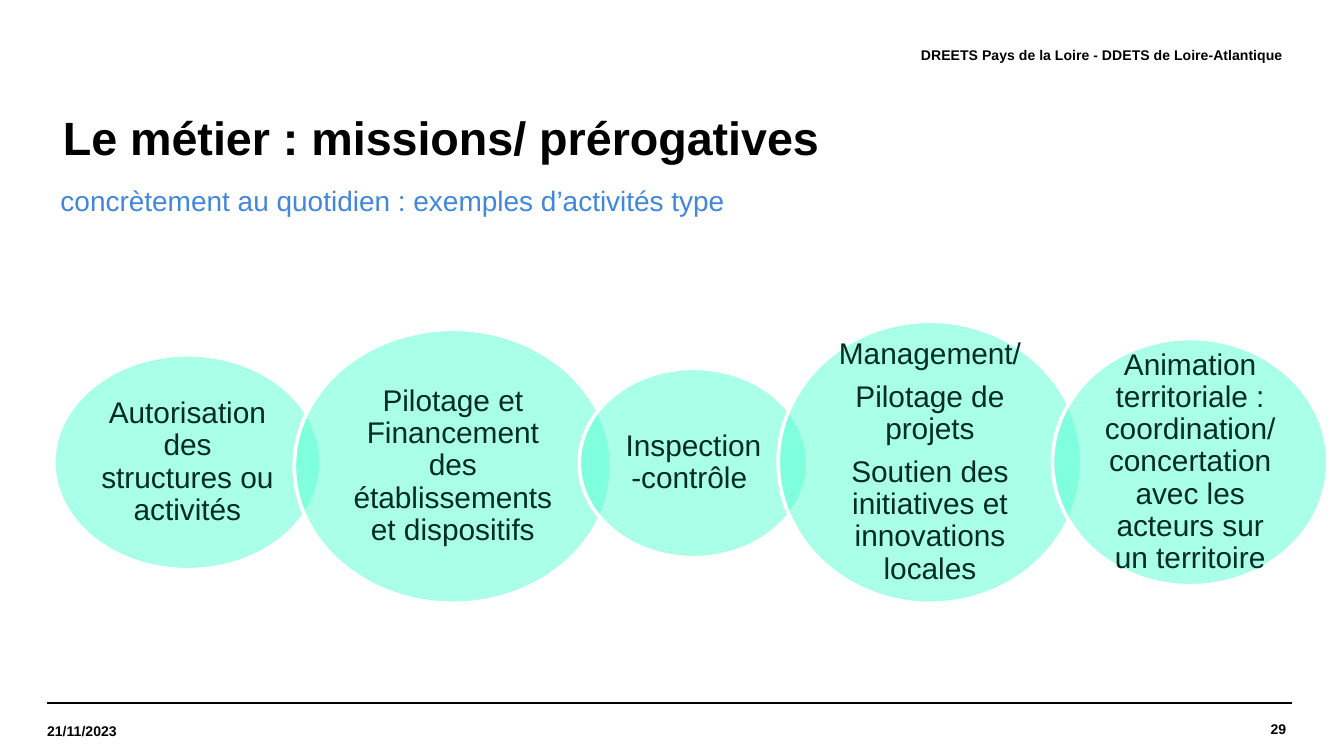
from lxml import etree
from pptx import Presentation
from pptx import util as u
from pptx.dml.color import RGBColor
from pptx.enum import shapes, text
from pptx.oxml import ns

BLACK = RGBColor(0x00, 0x00, 0x00)
WHITE = RGBColor(0xFF, 0xFF, 0xFF)
BLUE = RGBColor(0x41, 0x87, 0xDC)
MINT = RGBColor(0x56, 0xFF, 0xD3)
PINE = RGBColor(0x00, 0x2C, 0x21)
FONT = "Arial"
LEFT, MID, RIGHT = text.PP_ALIGN.LEFT, text.PP_ALIGN.CENTER, text.PP_ALIGN.RIGHT

TITLE = "Le métier : missions/ prérogatives"
LEAD = "concrètement au quotidien : exemples d’activités type"
# words, box, alignment
SMALL = [
    ("DREETS Pays de la Loire - DDETS de Loire-Atlantique ", (226.1, 15.1, 463, 28.1), RIGHT),
    ("21/11/2023", (25.2, 378, 95, 27.4), LEFT),
    ("29", (582.5, 376.6, 106.6, 28.1), RIGHT),
]
RULES = [25.2, 28.1]
RULE_TOP, RULE_LEN = 376.6, 663.9

# box, space after each paragraph, paragraphs
TASKS = [
    ((28.8, 190.1, 143.3, 115.2), 5.6, ["Autorisation des structures ou activités"]),
    ((157.7, 176.4, 169.9, 146.9), 5.6,
     ["Pilotage et Financement des établissements et dispositifs"]),
    ((310.3, 197.3, 122.4, 101.5), 5.6, ["Inspection-contrôle "]),
    ((416.9, 172.1, 162.7, 151.2), 5.6,
     ["Management/", "Pilotage de projets",
      "Soutien des initiatives et innovations locales"]),
    ((563.8, 181.4, 147.6, 132.5), 0,
     ["Animation territoriale : coordination/",
      "concertation avec les acteurs sur un territoire"]),
]


def points(box):
    return [u.Pt(n) for n in box]


def setup(frame, side, edge, anchor):
    frame.word_wrap = True
    frame.vertical_anchor = anchor
    frame.margin_left = frame.margin_right = u.Pt(side)
    frame.margin_top = frame.margin_bottom = u.Pt(edge)


def write(para, words, size, color, bold=False, align=LEFT):
    para.alignment = align
    run = para.add_run()
    run.text = words
    run.font.name, run.font.size = FONT, u.Pt(size)
    run.font.bold = bold
    run.font.color.rgb = color


def label(box, words, size, color, bold=False, align=LEFT,
          side=0, edge=0, anchor=text.MSO_ANCHOR.MIDDLE):
    frame = slide.shapes.add_textbox(*points(box)).text_frame
    setup(frame, side, edge, anchor)
    para = frame.paragraphs[0]
    write(para, words, size, color, bold, align)
    return para


def rule(left):
    line = slide.shapes.add_connector(
        shapes.MSO_CONNECTOR.STRAIGHT,
        *points((left, RULE_TOP, left + RULE_LEN, RULE_TOP)))
    line.line.color.rgb = BLACK
    line.line.width = u.Pt(0.8)
    etree.SubElement(line._element.spPr, ns.qn("a:effectLst"))


def bubble(box, after, lines):
    """Draw a half-transparent ellipse that holds its own text."""
    oval = slide.shapes.add_shape(shapes.MSO_SHAPE.OVAL, *points(box))
    oval.shadow.inherit = False
    oval.fill.solid()
    oval.fill.fore_color.rgb = MINT
    tint = oval._element.spPr.find(ns.qn("a:solidFill"))[0]
    etree.SubElement(tint, ns.qn("a:alpha"), val="50000")
    oval.line.color.rgb = WHITE
    oval.line.width = u.Pt(2)
    frame = oval.text_frame
    setup(frame, 4.3, 1.4, text.MSO_ANCHOR.MIDDLE)
    for i, words in enumerate(lines):
        para = frame.add_paragraph() if i else frame.paragraphs[0]
        para.line_spacing = 0.9
        para.space_after = u.Pt(after)
        write(para, words, 16, PINE, align=MID)


deck = Presentation()
deck.slide_width, deck.slide_height = u.Pt(720), u.Pt(405)
slide = deck.slides.add_slide(deck.slide_layouts[6])

for left in RULES:
    rule(left)
for words, box, align in SMALL:
    label(box, words, 7.5, BLACK, True, align)

lead = label((25.2, 98.6, 663.1, 19.4), LEAD, 15, BLUE, anchor=text.MSO_ANCHOR.TOP)
lead.space_after = u.Pt(8)
lead._p.get_or_add_pPr().set("indent", str(u.Pt(7.2)))

head = label((25.2, 54, 663.1, 42.5), TITLE, 25, BLACK, True, side=7.2, edge=3.6)
head.line_spacing = 0.9
head._p.get_or_add_pPr().set("marL", str(u.Pt(1.4)))

for task in TASKS:
    bubble(*task)

deck.save("out.pptx")
